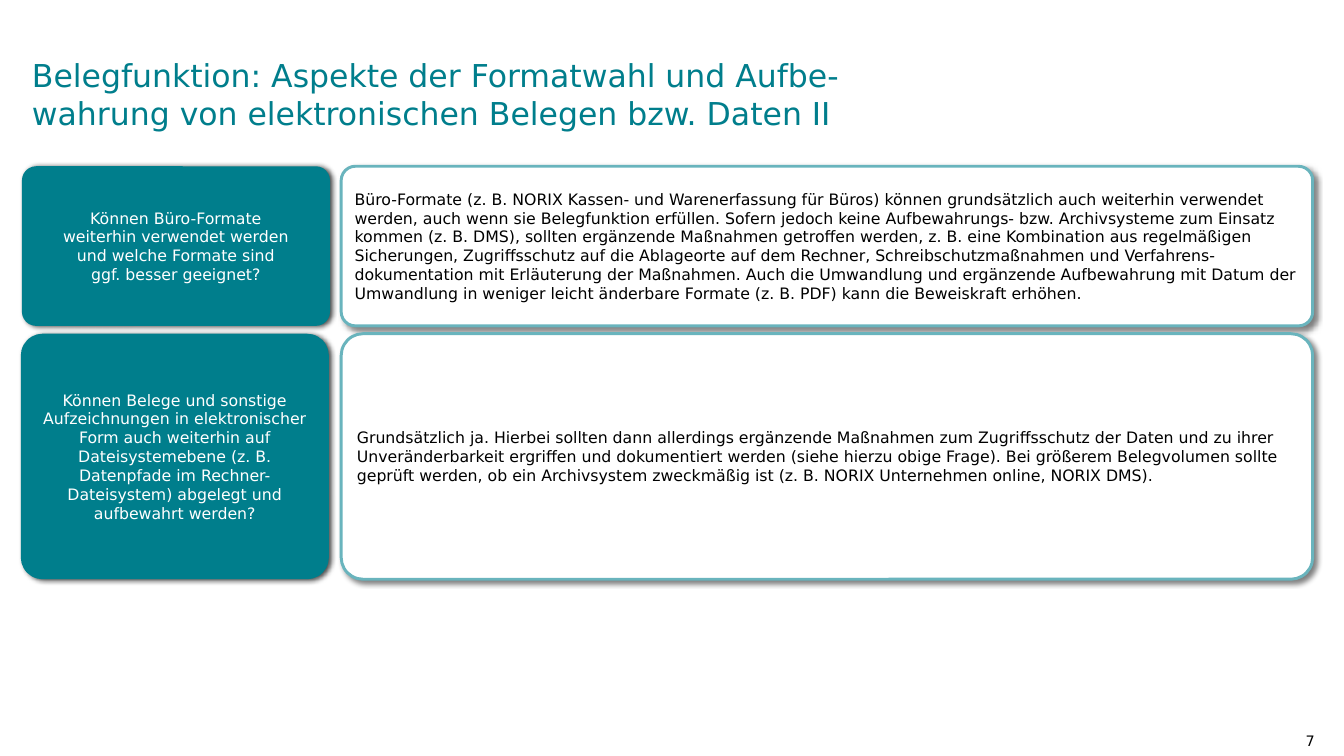
from lxml.etree import SubElement
from pptx import Presentation
from pptx.dml.color import RGBColor
from pptx.enum.shapes import MSO_SHAPE
from pptx.enum.text import MSO_ANCHOR, PP_ALIGN
from pptx.oxml.ns import qn
from pptx.util import Cm, Pt

TEAL, MINT, WHITE, BLACK = "007E8C", "69B4BD", "FFFFFF", "000000"
FONT = "DejaVu Sans"

# Content
TITLE = ("Belegfunktion: Aspekte der Formatwahl und Aufbe-wahrung von "
         "elektronischen Belegen bzw. Daten II")
PAGE = "7"
# Each row: height in cm, left edge of the question, question lines, answer
ROWS = [
    (4.29, 0.59,
     ["Können Büro-Formate", "weiterhin verwendet werden",
      "und welche Formate sind", "ggf. besser geeignet?"],
     "Büro-Formate (z. B. NORIX Kassen- und Warenerfassung für Büros) können "
     "grundsätzlich auch weiterhin verwendet werden, auch wenn sie Belegfunktion "
     "erfüllen. Sofern jedoch keine Aufbewahrungs- bzw. Archivsysteme zum Einsatz "
     "kommen (z. B. DMS), sollten ergänzende Maßnahmen getroffen werden, z. B. eine "
     "Kombination aus regelmäßigen Sicherungen, Zugriffsschutz auf die Ablageorte auf "
     "dem Rechner, Schreibschutzmaßnahmen und Verfahrens-dokumentation mit Erläuterung "
     "der Maßnahmen. Auch die Umwandlung und ergänzende Aufbewahrung mit Datum der "
     "Umwandlung in weniger leicht änderbare Formate (z. B. PDF) kann die Beweiskraft "
     "erhöhen."),
    (6.6, 0.56,
     ["Können Belege und sonstige", "Aufzeichnungen in elektronischer",
      "Form auch weiterhin auf",
      "Dateisystemebene (z. B. Datenpfade im Rechner-Dateisystem) abgelegt und "
      "aufbewahrt werden?"],
     "Grundsätzlich ja. Hierbei sollten dann allerdings ergänzende Maßnahmen zum "
     "Zugriffsschutz der Daten und zu ihrer Unveränderbarkeit ergriffen und "
     "dokumentiert werden (siehe hierzu obige Frage). Bei größerem Belegvolumen sollte "
     "geprüft werden, ob ein Archivsystem zweckmäßig ist (z. B. NORIX Unternehmen "
     "online, NORIX DMS)."),
]

# Layout in cm
TOP, GAP = 4.47, 0.21
ASK_W, TELL_X, TELL_W = 8.28, 9.17, 26.11


def tint(code):
    return RGBColor.from_string(code)


def write(shape, lines, size=12, color=BLACK, align=PP_ALIGN.LEFT,
          anchor=MSO_ANCHOR.MIDDLE, inset=(0.25, 0.13, 0.25, 0.13)):
    frame = shape.text_frame
    frame.word_wrap = True
    frame.vertical_anchor = anchor
    (frame.margin_left, frame.margin_top,
     frame.margin_right, frame.margin_bottom) = [Cm(v) for v in inset]
    frame.text = "\n".join(lines)
    for para in frame.paragraphs:
        para.alignment = align
        para.font.size = Pt(size)
        para.font.name = FONT
        para.font.color.rgb = tint(color)


def shade(shape, alpha, blur, dist, angle):
    """Give the shape an outer shadow (percent, points, points, degrees)."""
    shape.shadow.inherit = False
    effects = shape._element.spPr.find(qn("a:effectLst"))
    outer = SubElement(effects, qn("a:outerShdw"), blurRad=str(Pt(blur)),
                       dist=str(Pt(dist)), dir=str(angle * 60000),
                       algn="tl", rotWithShape="0")
    color = SubElement(outer, qn("a:srgbClr"), val=BLACK)
    SubElement(color, qn("a:alpha"), val=str(alpha * 1000))


def card(slide, box, fill, line=None):
    shape = slide.shapes.add_shape(MSO_SHAPE.ROUNDED_RECTANGLE,
                                   *[Cm(v) for v in box])
    shape.adjustments[0] = 0.089
    shape.fill.solid()
    shape.fill.fore_color.rgb = tint(fill)
    if line:
        shape.line.color.rgb = tint(line)
        shape.line.width = Pt(2.25)
    else:
        shape.line.fill.background()
    return shape


def label(slide, box, text, **style):
    write(slide.shapes.add_textbox(*[Cm(v) for v in box]), [text], **style)


def main():
    deck = Presentation()
    deck.slide_width, deck.slide_height = Cm(36.12), Cm(20.32)
    slide = deck.slides.add_slide(deck.slide_layouts[6])

    # Page number and title
    label(slide, (32.77, 19.53, 2.9, 0.53), PAGE, size=11, align=PP_ALIGN.RIGHT,
          anchor=MSO_ANCHOR.TOP, inset=(0.33, 0.15, 0.33, 0.15))
    label(slide, (0.86, 1.24, 24.31, 2.57), TITLE, size=24, color=TEAL,
          inset=(0, 0, 0.33, 0))

    # Question and answer cards
    top = TOP
    for high, left, ask, tell in ROWS:
        answer = card(slide, (TELL_X, top, TELL_W, high), WHITE, MINT)
        shade(answer, 50, 4, 3, 40)
        write(answer, [tell])
        question = card(slide, (left, top, ASK_W, high), TEAL)
        shade(question, 70, 4, 2, 20)
        write(question, ask, color=WHITE, align=PP_ALIGN.CENTER)
        top += high + GAP

    deck.save("out.pptx")


if __name__ == "__main__":
    main()
